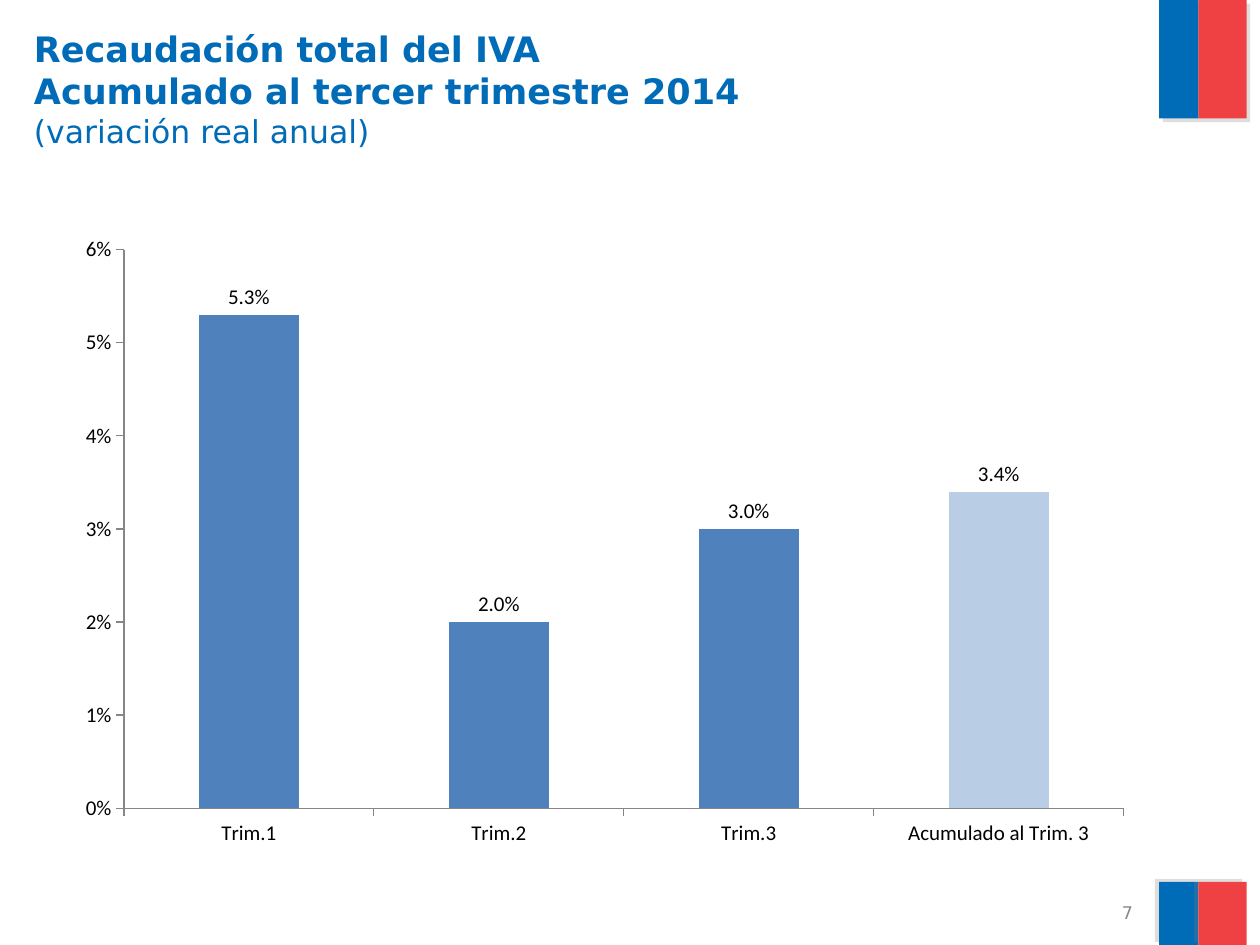
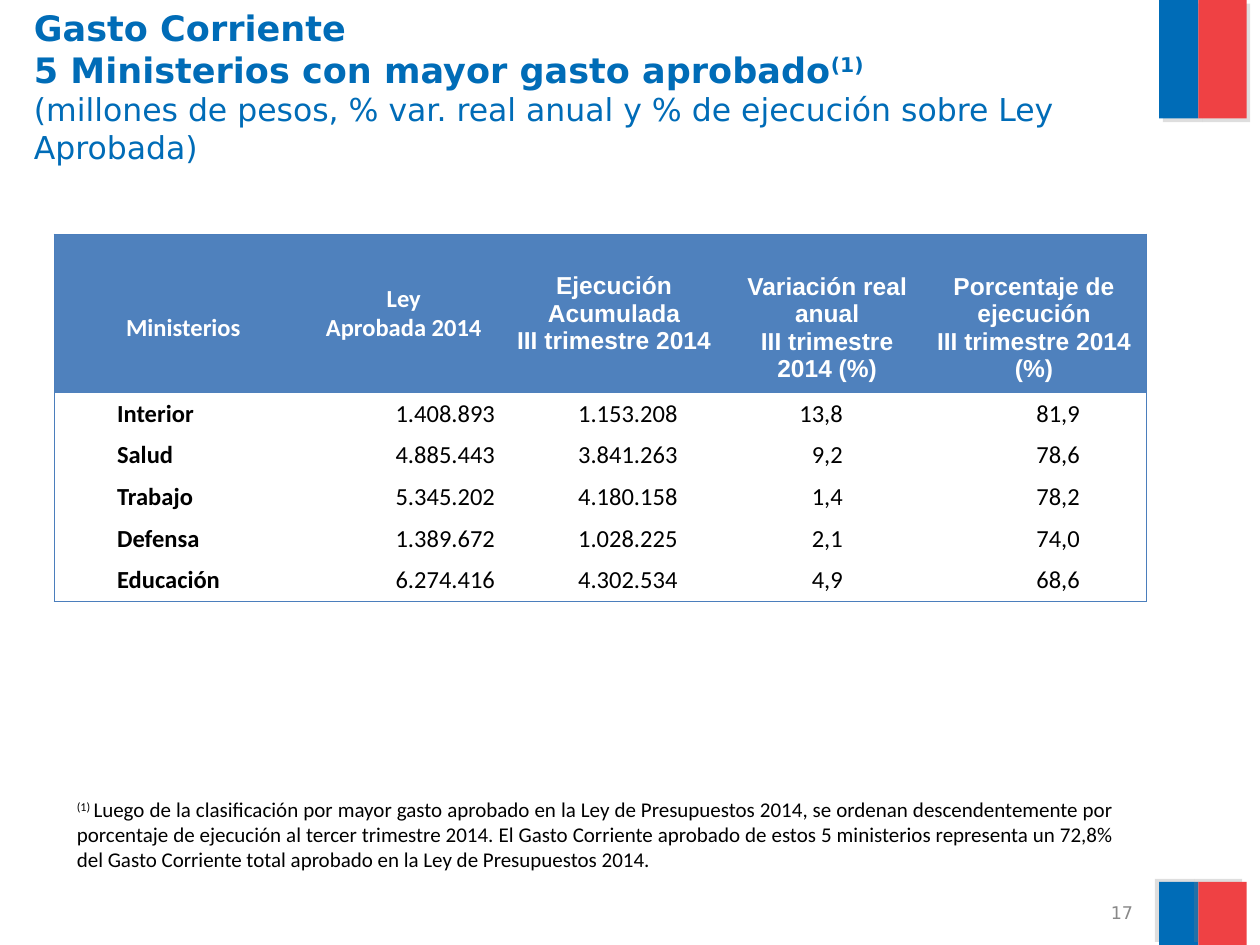
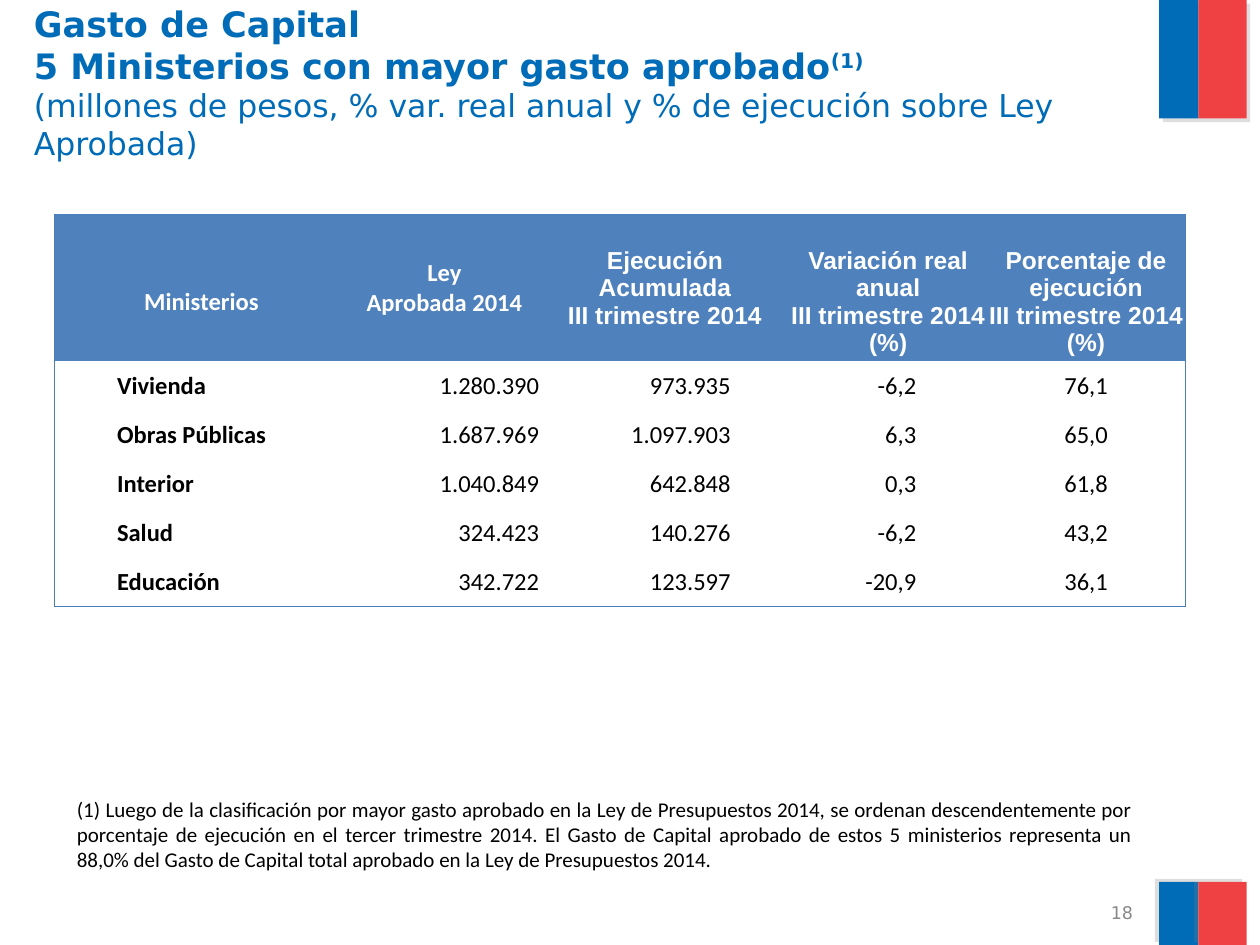
import dataclasses
import typing

import lxml.etree
import pptx
import pptx.chart.data
import pptx.dml.color
import pptx.enum.chart
import pptx.enum.shapes
import pptx.enum.text
import pptx.oxml.ns
import pptx.util

Cm = pptx.util.Cm
Pt = pptx.util.Pt
qn = pptx.oxml.ns.qn
Align = pptx.enum.text.PP_ALIGN
Anchor = pptx.enum.text.MSO_ANCHOR


@dataclasses.dataclass(frozen=True)
class Theme:
    blue: str = "006CB7"
    red: str = "EF4144"
    shade: str = "808080"
    bar: str = "4F81BD"
    pale: str = "B9CDE5"
    edge: str = "4B7EBC"
    axis: str = "868686"
    gray: str = "898989"
    white: str = "FFFFFF"
    black: str = "000000"
    head: str = "DejaVu Sans"
    body: str = "Calibri"
    alt: str = "Arial"
    title: int = 20
    sub: int = 18
    cell: int = 14
    note: int = 12
    page: int = 10


THEME = Theme()


class Box(typing.NamedTuple):
    """Left, top, width and height in centimetres."""
    left: float
    top: float
    width: float
    height: float

    def sizes(self) -> list[int]:
        return [Cm(side) for side in self]


class Band(typing.NamedTuple):
    box: Box
    color: str
    angle: int


class Head(typing.NamedTuple):
    box: Box
    lines: str
    mark: str
    sub: str
    page: str


class Note(typing.NamedTuple):
    box: Box
    mark: str
    text: str


class Label(typing.NamedTuple):
    text: str
    font: str
    drop: bool = False


class Grid(typing.NamedTuple):
    left: float
    top: float
    widths: list[float]
    first: float
    step: float
    pad: float
    inset: float   # right margin of the variation column
    shift: float   # left margin of the last column
    heads: list[Label]
    rows: list[list[str]]


# Shared band pairs: top and bottom of every slide
BANDS = [
    Band(Box(left, top, width, height), color, angle)
    for top, height, angle in ((0, 2.39, 45), (17.78, 1.27, 215))
    for left, width, color in ((23.37, 0.79, THEME.blue), (24.16, 0.97, THEME.red))
]
PAGE = Box(17.17, 18.14, 5.92, 0.53)
SLOTS = (0, 1, 2, 4, 6)   # columns that hold text
DROP = 0.58               # lowers some headings by one line

TOP = "5 Ministerios con mayor gasto aprobado"
UNITS = "(millones de pesos, % var. real anual y % de ejecución sobre Ley Aprobada)"
HEADS = [
    Label("Ministerios", THEME.body, True),
    Label("Ley\nAprobada 2014", THEME.body),
    Label("Ejecución\nAcumulada\nIII trimestre 2014", THEME.alt),
    Label("Variación real anual\nIII trimestre 2014 (%)", THEME.alt, True),
    Label("Porcentaje de ejecución\nIII trimestre 2014\n(%)", THEME.alt, True),
]

TAXES = Head(Box(0.43, 0.43, 22.68, 3.18),
             "Recaudación total del IVA\vAcumulado al tercer trimestre 2014",
             "", "(variación real anual)", "7")
CURRENT = Head(Box(0.43, 0, 23.47, 3.18), f"Gasto Corriente\v{TOP}", "(1)", UNITS, "17")
CAPITAL = Head(Box(0.43, -0.08, 23.47, 3.18), f"Gasto de Capital\v{TOP}", "(1)", UNITS, "18")

CHART = Box(1.3, 4.52, 21.79, 12.8)
RATES = {"Trim.1": 0.053, "Trim.2": 0.02, "Trim.3": 0.03, "Acumulado al Trim. 3": 0.034}
PLOT = {"x": 0.055, "y": 0.04, "w": 0.925, "h": 0.88}

SPEND = Grid(1.09, 4.72, [5.21, 3.68, 3.68, 1.12, 2.34, 1.45, 4.55], 3.2, 0.84, 0, 0.13, 0.97,
             HEADS, [
                 ["Interior", "1.408.893", "1.153.208", "13,8", "81,9"],
                 ["Salud", "4.885.443", "3.841.263", "9,2", "78,6"],
                 ["Trabajo", "5.345.202", "4.180.158", "1,4", "78,2"],
                 ["Defensa", "1.389.672", "1.028.225", "2,1", "74,0"],
                 ["Educación", "6.274.416", "4.302.534", "4,9", "68,6"],
             ])
INVEST = Grid(1.09, 4.32, [5.94, 3.86, 3.86, 1.17, 2.57, 1.4, 4.01], 2.86, 0.99, 0.02, 0.02, 0.02,
              HEADS, [
                  ["Vivienda", "1.280.390", "973.935", "-6,2", "76,1"],
                  ["Obras Públicas", "1.687.969", "1.097.903", "6,3", "65,0"],
                  ["Interior", "1.040.849", "642.848", "0,3", "61,8"],
                  ["Salud", "324.423", "140.276", "-6,2", "43,2"],
                  ["Educación", "342.722", "123.597", "-20,9", "36,1"],
              ])

BASIS = ("Luego de la clasificación por mayor gasto aprobado en la Ley de Presupuestos 2014, "
         "se ordenan descendentemente por porcentaje de ejecución ")
TOTAL = "total aprobado en la Ley de Presupuestos 2014."
SPENT = Note(Box(1.3, 15.93, 21.41, 1.8), "(1) ",
             f"{BASIS}al tercer trimestre 2014. El Gasto Corriente aprobado de estos 5 "
             f"ministerios representa un 72,8% del Gasto Corriente {TOTAL}")
BUILT = Note(Box(1.3, 15.93, 21.79, 1.8), "",
             f"(1) {BASIS}en el tercer trimestre 2014. El Gasto de Capital aprobado de estos 5 "
             f"ministerios representa un 88,0% del Gasto de Capital {TOTAL}")


# Basic helpers
def tint(code: str) -> pptx.dml.color.RGBColor:
    return pptx.dml.color.RGBColor.from_string(code)


def style(font, name: str, size: int, color: str, bold: bool = False) -> None:
    font.name, font.size, font.bold = name, Pt(size), bold
    font.color.rgb = tint(color)


def raise_run(run) -> None:
    run._r.get_or_add_rPr().set("baseline", "30000")


def add_tag(root, tag: str, **attrs: str):
    return lxml.etree.SubElement(root, qn(tag), attrs)


# Parts shared by the slides
def draw_band(slide, layout, band: Band) -> None:
    kind = pptx.enum.shapes.MSO_SHAPE.RECTANGLE
    shape = slide.shapes.add_shape(kind, *band.box.sizes())
    shape.fill.solid()
    shape.fill.fore_color.rgb = tint(band.color)
    shape.line.fill.background()
    shape.shadow.inherit = False
    glow = add_tag(shape.element.spPr.find(qn("a:effectLst")), "a:outerShdw", blurRad="0",
                   dist=str(Pt(3)), dir=str(band.angle * 60000), algn="ctr", rotWithShape="0")
    add_tag(add_tag(glow, "a:srgbClr", val=THEME.shade), "a:alpha", val="25000")
    layout.shapes.element.append(shape.element)


def draw_head(slide, head: Head) -> None:
    title = slide.shapes.title
    title.left, title.top, title.width, title.height = head.box.sizes()
    frame = title.text_frame
    frame.auto_size = pptx.enum.text.MSO_AUTO_SIZE.NONE
    frame.vertical_anchor = Anchor.TOP
    para = frame.paragraphs[0]
    para.text = head.lines
    para.alignment = Align.LEFT
    if head.mark:
        mark = para.add_run()
        mark.text = head.mark
        raise_run(mark)
    for run in para.runs:
        style(run.font, THEME.head, THEME.title, THEME.blue, True)
    para.add_line_break()
    sub = para.add_run()
    sub.text = head.sub
    style(sub.font, THEME.head, THEME.sub, THEME.blue)

    frame = slide.shapes.add_textbox(*PAGE.sizes()).text_frame
    frame.word_wrap = True
    frame.vertical_anchor = Anchor.MIDDLE
    frame.text = head.page
    para = frame.paragraphs[0]
    para.alignment = Align.RIGHT
    style(para.runs[0].font, THEME.head, THEME.page, THEME.gray)


def draw_note(slide, note: Note) -> None:
    frame = slide.shapes.add_textbox(*note.box.sizes()).text_frame
    frame.word_wrap = True
    para = frame.paragraphs[0]
    para.alignment = Align.JUSTIFY
    para.text = note.mark or note.text
    if note.mark:
        raise_run(para.runs[0])
        para.add_run().text = note.text
    for run in para.runs:
        style(run.font, THEME.body, THEME.note, THEME.black)


# Column chart
def draw_chart(slide) -> None:
    enum = pptx.enum.chart
    data = pptx.chart.data.CategoryChartData(number_format="0.0%")
    data.categories = list(RATES)
    data.add_series("Series 1", list(RATES.values()))
    chart = slide.shapes.add_chart(enum.XL_CHART_TYPE.COLUMN_CLUSTERED,
                                   *CHART.sizes(), data).chart
    chart.has_legend = chart.has_title = False
    style(chart.font, THEME.body, THEME.note, THEME.black)

    for axis in (chart.category_axis, chart.value_axis):
        axis.has_major_gridlines = False
        axis.major_tick_mark = enum.XL_TICK_MARK.OUTSIDE
        axis.format.line.color.rgb = tint(THEME.axis)
        axis.format.line.width = Pt(0.75)
    scale = chart.value_axis
    scale.minimum_scale, scale.maximum_scale, scale.major_unit = 0, 0.06, 0.01
    scale.tick_labels.number_format = "0%"
    scale.tick_labels.number_format_is_linked = False

    plot = chart.plots[0]
    plot.gap_width = 150
    plot.vary_by_categories = False
    bars = plot.series[0]
    last = bars.points[len(RATES) - 1]
    for part, color in ((bars, THEME.bar), (last, THEME.pale)):
        part.format.fill.solid()
        part.format.fill.fore_color.rgb = tint(color)
    plot.has_data_labels = True
    labels = plot.data_labels
    labels.show_value = True
    labels.number_format = "0.0%"
    labels.number_format_is_linked = False
    labels.position = enum.XL_LABEL_POSITION.OUTSIDE_END

    # Fixed inner plot area
    area = chart.element.find(".//" + qn("c:plotArea"))
    for old in area.findall(qn("c:layout")):
        area.remove(old)
    room = lxml.etree.Element(qn("c:layout"))
    area.insert(0, room)
    place = add_tag(room, "c:manualLayout")
    add_tag(place, "c:layoutTarget", val="inner")
    for side in "xy":
        add_tag(place, f"c:{side}Mode", val="edge")
    for side, share in PLOT.items():
        add_tag(place, f"c:{side}", val=str(share))


# Tables
def edge_cell(cell, sides: str) -> None:
    root = cell._tc.get_or_add_tcPr()
    for side in sides:
        line = add_tag(root, f"a:ln{side}", w=str(Pt(0.75)))
        add_tag(add_tag(line, "a:solidFill"), "a:srgbClr", val=THEME.edge)


def fill_cell(cell, text: str, align, font: str, color: str, bold: bool) -> None:
    cell.text = text
    cell.vertical_anchor = Anchor.MIDDLE
    for para in cell.text_frame.paragraphs:
        para.alignment = align
        for run in para.runs:
            style(run.font, font, THEME.cell, color, bold)


def draw_grid(slide, grid: Grid) -> None:
    count, wide = len(grid.rows) + 1, len(grid.widths)
    box = Box(grid.left, grid.top, sum(grid.widths), grid.first + grid.step * len(grid.rows))
    frame = slide.shapes.add_table(count, wide, *box.sizes())
    table = frame.table
    table.horz_banding = False
    # Plain style without lines
    plain = frame.element.find(".//" + qn("a:tableStyleId"))
    plain.text = "{2D5ABB26-0587-4C30-8999-92F81FD0307C}"
    for column, width in zip(table.columns, grid.widths):
        column.width = Cm(width)
    for index, row in enumerate(table.rows):
        row.height = Cm(grid.step if index else grid.first)

    # Outer edge, margins and fills
    for r in range(count):
        for c in range(wide):
            cell = table.cell(r, c)
            edges = {"L": c == 0, "R": c == wide - 1, "T": r == 0, "B": r == count - 1}
            edge_cell(cell, "".join(side for side, on in edges.items() if on))
            cell.margin_left = cell.margin_right = cell.margin_top = Cm(grid.pad)
            cell.margin_bottom = 0
            if r:
                cell.fill.background()
            else:
                cell.fill.solid()
                cell.fill.fore_color.rgb = tint(THEME.bar)

    # Heading row
    for c in (2, 4):
        table.cell(0, c).merge(table.cell(0, c + 1))
    for c, label in zip(SLOTS, grid.heads):
        cell = table.cell(0, c)
        fill_cell(cell, label.text, Align.CENTER, label.font, THEME.white, True)
        if label.drop:
            cell.margin_top = Cm(DROP)

    # Ministry rows
    sides = (Align.LEFT, Align.RIGHT, Align.RIGHT, Align.RIGHT, Align.CENTER)
    for r, values in enumerate(grid.rows, 1):
        for c, value, side in zip(SLOTS, values, sides):
            fill_cell(table.cell(r, c), value, side, THEME.body, THEME.black, c == 0)
        table.cell(r, 0).margin_left = Cm(1.27)
        table.cell(r, 4).margin_right = Cm(grid.inset)
        table.cell(r, 6).margin_left = Cm(grid.shift)


def main() -> None:
    deck = pptx.Presentation()
    deck.slide_width, deck.slide_height = Cm(25.4), Cm(19.05)
    layout = deck.slide_layouts[5]
    slides = [deck.slides.add_slide(layout) for _ in range(3)]
    for band in BANDS:
        draw_band(slides[0], layout, band)
    for slide, head in zip(slides, (TAXES, CURRENT, CAPITAL)):
        draw_head(slide, head)
    draw_chart(slides[0])
    for slide, grid, note in zip(slides[1:], (SPEND, INVEST), (SPENT, BUILT)):
        draw_grid(slide, grid)
        draw_note(slide, note)
    deck.save("out.pptx")


if __name__ == "__main__":
    main()
